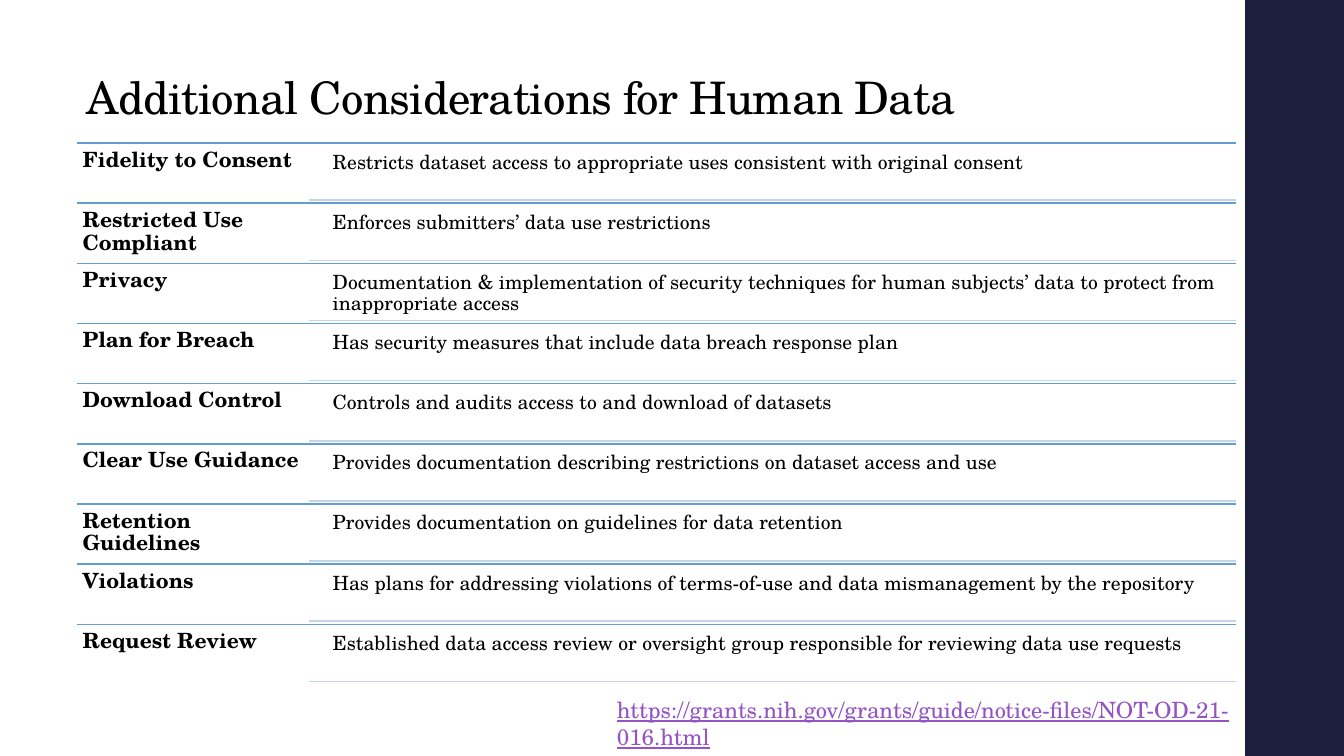
from lxml import etree
from pptx import Presentation
from pptx.dml.color import RGBColor
from pptx.enum.shapes import MSO_CONNECTOR, MSO_SHAPE
from pptx.enum.text import MSO_ANCHOR, MSO_AUTO_SIZE, PP_ALIGN
from pptx.oxml.ns import qn
from pptx.util import Inches, Pt

RECT = MSO_SHAPE.RECTANGLE
STRAIGHT = MSO_CONNECTOR.STRAIGHT
TOP, BOTTOM = MSO_ANCHOR.TOP, MSO_ANCHOR.BOTTOM
NO_FIT = MSO_AUTO_SIZE.NONE
LEFT = PP_ALIGN.LEFT

FONT = "TeX Gyre Schola"
BLACK, NAVY, BLUE, PALE, PURPLE = "000000", "1B1E3E", "629DD1", "C5D5E9", "9454C3"

TITLE = "Additional Considerations for Human Data"
URL = "https://grants.nih.gov/grants/guide/notice-files/NOT-OD-21-016.html"
ROWS = [
    ("Fidelity to Consent",
     "Restricts dataset access to appropriate uses consistent with original consent"),
    ("Restricted Use Compliant",
     "Enforces submitters’ data use restrictions"),
    ("Privacy",
     "Documentation & implementation of security techniques for human subjects’ data "
     "to protect from inappropriate access"),
    ("Plan for Breach",
     "Has security measures that include data breach response plan"),
    ("Download Control",
     "Controls and audits access to and download of datasets"),
    ("Clear Use Guidance",
     "Provides documentation describing restrictions on dataset access and use"),
    ("Retention Guidelines",
     "Provides documentation on guidelines for data retention"),
    ("Violations",
     "Has plans for addressing violations of terms-of-use and data mismanagement "
     "by the repository"),
    ("Request Review",
     "Established data access review or oversight group responsible for reviewing "
     "data use requests"),
]


def rgb(code):
    return RGBColor.from_string(code)


def write(shape, text, size, color=BLACK, bold=False, line=None, under=False,
          anchor=TOP, inset=None, track=None):
    """Fill a shape with one formatted paragraph."""
    frame = shape.text_frame
    frame.word_wrap = True
    frame.auto_size = NO_FIT
    frame.vertical_anchor = anchor
    if inset is not None:
        frame.margin_left = frame.margin_right = Inches(inset)
        frame.margin_top = frame.margin_bottom = Inches(inset)
    para = frame.paragraphs[0]
    para.alignment = LEFT
    if line:
        para.line_spacing = line
    run = para.add_run()
    run.text = text
    font = run.font
    font.name, font.size, font.bold, font.underline = FONT, Pt(size), bold, under
    font.color.rgb = rgb(color)
    if track:
        font._element.set("spc", str(int(track * 100)))


def add_text(parent, box, text, size, **style):
    write(parent.add_textbox(*map(Inches, box)), text, size, **style)


def add_rule(parent, left, right, y, color):
    rule = parent.add_connector(STRAIGHT, *map(Inches, (left, y, right, y)))
    rule.line.color.rgb = rgb(color)
    rule.line.width = Pt(1.1)
    etree.SubElement(rule._element.spPr, qn("a:effectLst"))


def add_band(slide, box):
    band = slide.shapes.add_shape(RECT, *map(Inches, box))
    band.shadow.inherit = False
    band.fill.solid()
    band.fill.fore_color.rgb = rgb(NAVY)
    band.line.fill.background()


def add_title(slide, box):
    title = slide.shapes.title
    title.left, title.top, title.width, title.height = map(Inches, box)
    write(title, TITLE, 32, line=0.9, anchor=BOTTOM, track=-0.5)


def add_list(slide, box):
    """Stack equal rows: a bold term on the left, its meaning on the right."""
    left, top, width, height = box
    right, step = left + width, height / len(ROWS)
    split = left + width / 5
    gap, pad = 0.18, 0.03
    deep = step - 2 * pad
    group = slide.shapes.add_group_shape().shapes
    for i, (term, note) in enumerate(ROWS):
        y = top + i * step
        add_rule(group, left, right, y, BLUE)
        add_text(group, (left, y, split - left, step), term, 15,
                 bold=True, line=0.9, inset=0.06)
        add_text(group, (split + gap, y + pad, right - split - gap, deep), note, 14,
                 line=0.9, inset=0.06)
        add_rule(group, split, right, y + pad + deep, PALE)


def add_source(slide, box):
    add_text(slide.shapes, box, URL, 16, color=PURPLE, under=True)


def main():
    deck = Presentation()
    deck.slide_width, deck.slide_height = Inches(13.33), Inches(7.5)
    slide = deck.slides.add_slide(deck.slide_layouts[5])
    add_band(slide, (12.35, 0, 0.98, 7.5))
    add_title(slide, (0.76, 0.45, 11.5, 0.83))
    add_list(slide, (0.76, 1.42, 11.5, 5.37))
    add_source(slide, (6.02, 6.86, 6.67, 0.64))
    deck.save("out.pptx")


if __name__ == "__main__":
    main()
